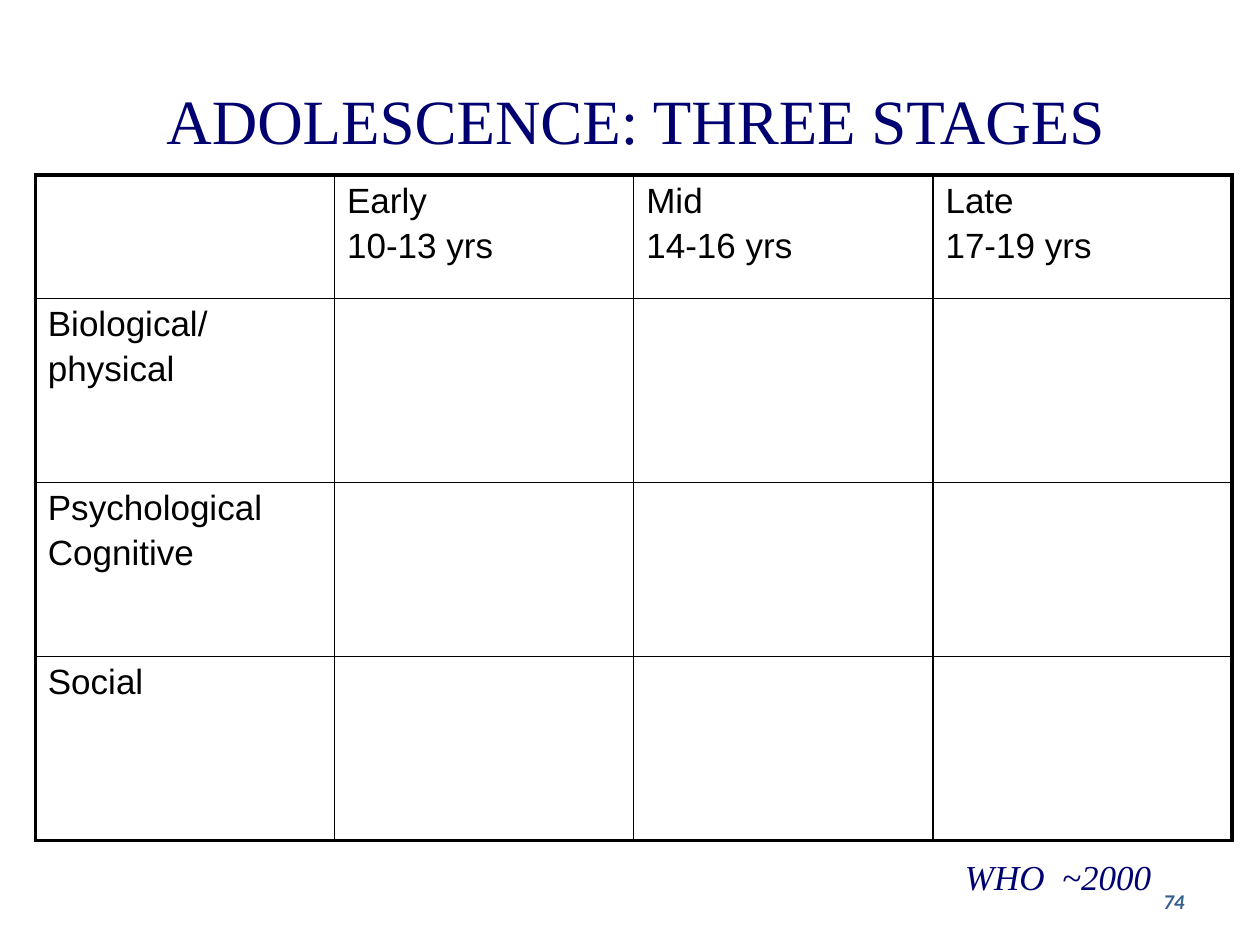
from dataclasses import dataclass

from lxml.etree import SubElement
from pptx import Presentation
from pptx.dml.color import RGBColor
from pptx.enum.text import MSO_ANCHOR as Anchor, MSO_AUTO_SIZE as AutoSize, PP_ALIGN as Align
from pptx.oxml.ns import qn
from pptx.util import Inches, Pt

COLORS = {"ink": "000000", "navy": "000070", "number": "376092"}
OUTER, INNER = 2.25, 1.0  # rule widths in points

STAGES = [
    ["", "Early\n10-13 yrs", "Mid\n14-16 yrs", "Late\n17-19 yrs"],
    ["Biological/\nphysical", "", "", ""],
    ["Psychological\nCognitive", "", "", ""],
    ["Social", "", "", ""],
]
ROW_HEIGHTS = [0.98, 1.46, 1.38, 1.46]
TABLE_LEFT, TABLE_TOP, TABLE_WIDTH = 0.28, 1.39, 9.5


@dataclass
class Label:
    text: str
    box: tuple[float, float, float, float]
    font: str
    size: float
    color: str
    align: Align = Align.LEFT
    bold: bool = False
    italic: bool = False
    wrap: bool = False
    anchor: Anchor = Anchor.TOP


TITLE = Label("ADOLESCENCE: THREE STAGES", (1.04, 0.6, 8.01, 0.71),
              "Times New Roman", 36, "navy", Align.CENTER)
CAPTIONS = [
    Label("74", (7.17, 6.95, 2.33, 0.4), "Calibri", 12, "number", Align.RIGHT,
          bold=True, italic=True, wrap=True, anchor=Anchor.MIDDLE),
    Label("WHO  ~2000", (7.56, 6.74, 1.7, 0.44), "Times New Roman", 20, "navy",
          italic=True),
]


def style_font(font, name: str, size: float, color: str) -> None:
    font.name, font.size = name, Pt(size)
    font.color.rgb = RGBColor.from_string(COLORS[color])


def write_label(shape, label: Label) -> None:
    shape.left, shape.top, shape.width, shape.height = map(Inches, label.box)
    frame = shape.text_frame
    frame.text = label.text
    frame.auto_size = AutoSize.NONE
    frame.word_wrap = label.wrap
    frame.vertical_anchor = label.anchor
    line = frame.paragraphs[0]
    line.alignment = label.align
    font = line.runs[0].font
    style_font(font, label.font, label.size, label.color)
    font.bold, font.italic = label.bold, label.italic


def rule_cell(cell, widths: dict[str, float]) -> None:
    """Draw the four borders; they come before the fill in the cell's XML."""
    properties = cell._tc.get_or_add_tcPr()
    for side, width in widths.items():
        border = SubElement(properties, qn(f"a:ln{side}"), w=str(Pt(width)))
        fill = SubElement(border, qn("a:solidFill"))
        SubElement(fill, qn("a:srgbClr"), val=COLORS["ink"])


def add_stage_table(slide) -> None:
    rows, columns = len(STAGES), len(STAGES[0])
    table = slide.shapes.add_table(
        rows, columns, Inches(TABLE_LEFT), Inches(TABLE_TOP),
        Inches(TABLE_WIDTH), Inches(sum(ROW_HEIGHTS))).table
    table.first_row = table.horz_banding = False
    for r, height in enumerate(ROW_HEIGHTS):
        table.rows[r].height = Inches(height)
        for c, text in enumerate(STAGES[r]):
            cell = table.cell(r, c)
            rule_cell(cell, {
                "L": OUTER if c == 0 else INNER,
                "R": OUTER if c == columns - 1 else INNER,
                "T": OUTER if r == 0 else INNER,
                "B": OUTER if r == rows - 1 else INNER,
            })
            cell.fill.background()
            cell.text_frame.text = text
            for line in cell.text_frame.paragraphs:
                line.space_before = Pt(3.5)
                for run in line.runs:
                    style_font(run.font, "Arial", 20, "ink")


def main() -> None:
    deck = Presentation()
    deck.slide_width, deck.slide_height = Inches(10), Inches(7.5)
    slide = deck.slides.add_slide(deck.slide_layouts[5])

    # Heading
    write_label(slide.shapes.title, TITLE)
    # Grid of aspects by stage
    add_stage_table(slide)
    # Page number and reference
    for caption in CAPTIONS:
        write_label(slide.shapes.add_textbox(0, 0, 0, 0), caption)

    deck.save("out.pptx")


if __name__ == "__main__":
    main()
